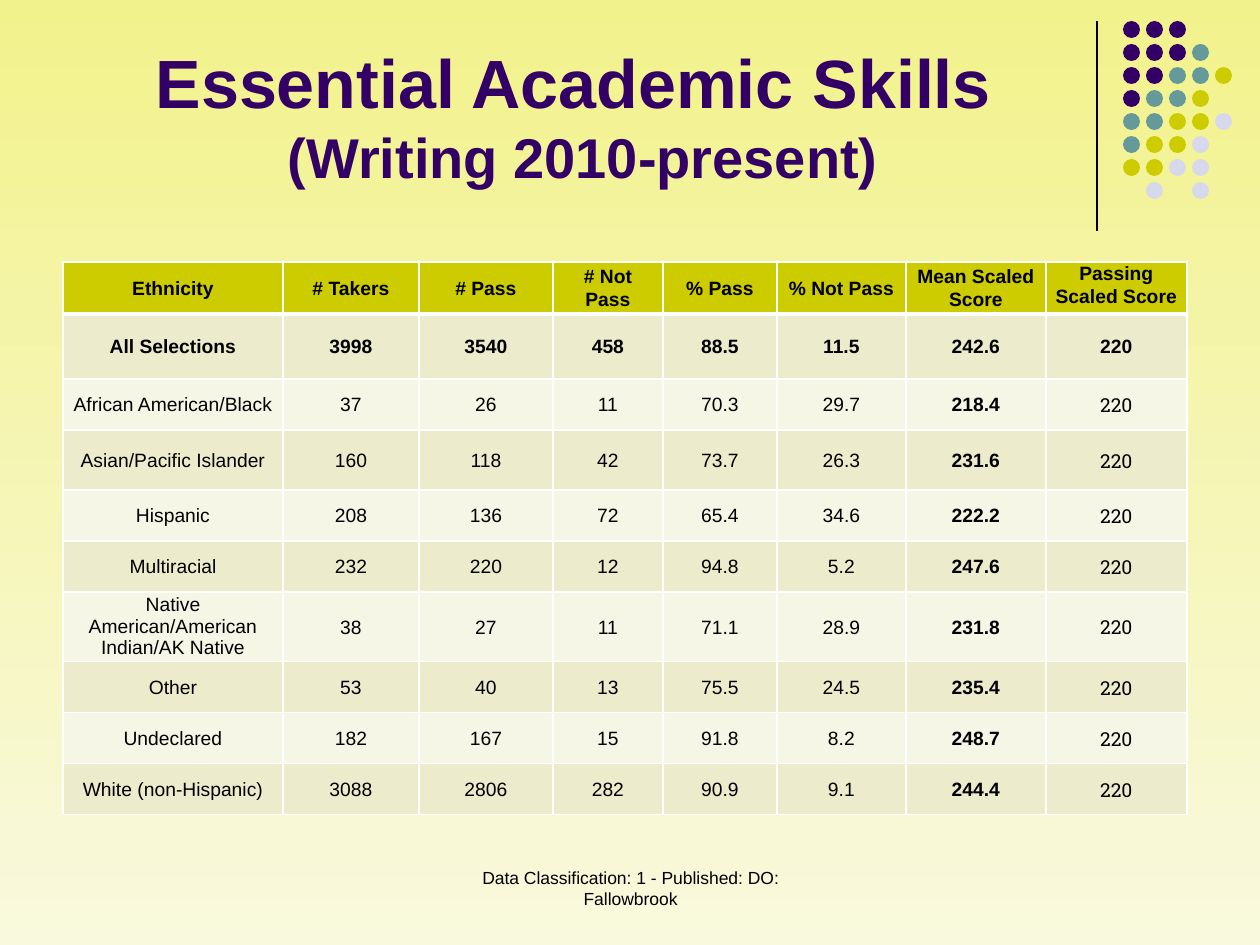
from dataclasses import dataclass

from lxml import etree
from pptx import Presentation
from pptx.dml.color import RGBColor
from pptx.enum.shapes import MSO_CONNECTOR, MSO_SHAPE
from pptx.enum.text import MSO_ANCHOR, PP_ALIGN
from pptx.oxml.ns import qn
from pptx.util import Pt

CENTER = PP_ALIGN.CENTER
TOP, MIDDLE, BOTTOM = MSO_ANCHOR.TOP, MSO_ANCHOR.MIDDLE, MSO_ANCHOR.BOTTOM
OVAL, STRAIGHT = MSO_SHAPE.OVAL, MSO_CONNECTOR.STRAIGHT
EMU_PER_PX = 914400 // 126


@dataclass(frozen=True)
class Theme:
    font: str = "Arial"
    score_font: str = "Roboto Slab"
    background_top: str = "F2F28C"
    background_bottom: str = "F9F9DE"
    purple: str = "330066"
    teal: str = "669999"
    olive: str = "CCCC00"
    lavender: str = "D8D8EC"
    ink: str = "000000"
    grid: str = "FFFFFF"
    band_dark: str = "ECECCC"
    band_light: str = "F6F6E7"
    title_size: float = 39
    subtitle_size: float = 32
    table_size: float = 11
    footer_size: float = 10


THEME = Theme()

# One letter per dot, a space where the grid is empty
DOT_ROWS = ["PPP", "PPPT", "PPTTO", "PTTO", "TTOOL", "TOOL", "OOLL", " L L"]
DOT_COLORS = {"P": THEME.purple, "T": THEME.teal,
              "O": THEME.olive, "L": THEME.lavender}

COLUMN_WIDTHS = [220, 136, 134, 110, 114, 129, 140, 141]
ROW_HEIGHTS = [52, 65, 51, 60, 51, 51, 69, 51, 51, 51]
MEAN_COLUMN, PASSING_COLUMN = 6, 7
PASSING_SCORE = "220"
LONG_LABEL = 30  # characters; such a label takes three lines
HEADER = ["Ethnicity", "# Takers", "# Pass", "# Not Pass", "% Pass",
          "% Not Pass", "Mean Scaled Score", "Passing Scaled Score"]
RESULTS = [
    ["All Selections", "3998", "3540", "458", "88.5", "11.5", "242.6"],
    ["African American/Black", "37", "26", "11", "70.3", "29.7", "218.4"],
    ["Asian/Pacific Islander", "160", "118", "42", "73.7", "26.3", "231.6"],
    ["Hispanic", "208", "136", "72", "65.4", "34.6", "222.2"],
    ["Multiracial", "232", "220", "12", "94.8", "5.2", "247.6"],
    ["Native American/American Indian/AK Native",
     "38", "27", "11", "71.1", "28.9", "231.8"],
    ["Other", "53", "40", "13", "75.5", "24.5", "235.4"],
    ["Undeclared", "182", "167", "15", "91.8", "8.2", "248.7"],
    ["White (non-Hispanic)", "3088", "2806", "282", "90.9", "9.1", "244.4"],
]


def px(length):
    return length * EMU_PER_PX


def rgb(color):
    return RGBColor.from_string(color)


def style_font(font, size, color, bold=False, name=THEME.font):
    font.name, font.size, font.bold = name, Pt(size), bold
    font.color.rgb = rgb(color)


def paint_background(slide):
    fill = slide.background.fill
    fill.gradient()
    fill.gradient_angle = 270
    first, last = fill.gradient_stops
    first.color.rgb = rgb(THEME.background_top)
    last.color.rgb = rgb(THEME.background_bottom)


def add_divider(slide, x, top, bottom):
    divider = slide.shapes.add_connector(
        STRAIGHT, px(x), px(top), px(x), px(bottom))
    divider.line.color.rgb = rgb(THEME.ink)
    divider.line.width = Pt(0.75)
    etree.SubElement(divider._element.spPr, qn("a:effectLst"))


def add_dots(slide, left, top, pitch, size):
    for row, letters in enumerate(DOT_ROWS):
        for column, letter in enumerate(letters):
            if letter == " ":
                continue
            dot = slide.shapes.add_shape(
                OVAL, px(left + column * pitch), px(top + row * pitch),
                px(size), px(size))
            dot.shadow.inherit = False
            dot.fill.solid()
            dot.fill.fore_color.rgb = rgb(DOT_COLORS[letter])
            dot.line.fill.background()


def add_text_area(slide, left, top, width, height, anchor):
    frame = slide.shapes.add_textbox(
        px(left), px(top), px(width), px(height)).text_frame
    frame.word_wrap = True
    frame.vertical_anchor = anchor
    frame.paragraphs[0].alignment = CENTER
    return frame.paragraphs[0]


def add_title(slide):
    title = add_text_area(slide, 63, 16, 1040, 180, BOTTOM)
    heading = title.add_run()
    heading.text = "Essential Academic Skills "
    style_font(heading.font, THEME.title_size, THEME.purple, bold=True)
    title.add_line_break()
    subtitle = title.add_run()
    subtitle.text = "(Writing 2010-present)"
    style_font(subtitle.font, THEME.subtitle_size, THEME.purple, bold=True)


def add_footer(slide):
    footer = add_text_area(slide, 431, 861, 399, 63, TOP)
    footer.text = "Data Classification: 1 - Published: DO: Fallowbrook"
    style_font(footer.font, THEME.footer_size, THEME.ink)


def set_borders(cell, top, bottom):
    properties = cell._tc.get_or_add_tcPr()
    widths = {"a:lnL": 1, "a:lnR": 1, "a:lnT": top, "a:lnB": bottom}
    for position, (tag, width) in enumerate(widths.items()):
        border = etree.Element(qn(tag), w=str(Pt(width)))
        fill = etree.SubElement(border, qn("a:solidFill"))
        etree.SubElement(fill, qn("a:srgbClr"), val=THEME.grid)
        properties.insert(position, border)


def fill_cell(cell, text, row, column):
    emphasized = row < 2  # header and totals
    is_score = column == PASSING_COLUMN and not emphasized
    if row == 0:
        color = THEME.olive
    else:
        color = THEME.band_dark if row % 2 else THEME.band_light
    cell.fill.solid()
    cell.fill.fore_color.rgb = rgb(color)
    set_borders(cell, top=3 if row == 1 else 1, bottom=3 if row == 0 else 1)
    cell.margin_left = cell.margin_right = px(9)
    cell.margin_top = cell.margin_bottom = 0
    top_aligned = row == 0 and column == PASSING_COLUMN
    cell.vertical_anchor = TOP if top_aligned else MIDDLE
    paragraph = cell.text_frame.paragraphs[0]
    paragraph.text = text
    paragraph.alignment = CENTER
    paragraph.line_spacing = 1.0 if len(text) > LONG_LABEL else 1.07
    style_font(paragraph.font, THEME.table_size, THEME.ink,
               bold=emphasized or column == MEAN_COLUMN,
               name=THEME.score_font if is_score else THEME.font)


def add_results_table(slide, left, top):
    rows = [HEADER] + [result + [PASSING_SCORE] for result in RESULTS]
    table = slide.shapes.add_table(
        len(rows), len(HEADER), px(left), px(top),
        px(sum(COLUMN_WIDTHS)), px(sum(ROW_HEIGHTS))).table
    for column, width in zip(table.columns, COLUMN_WIDTHS):
        column.width = px(width)
    for row, height in zip(table.rows, ROW_HEIGHTS):
        row.height = px(height)
    for row, texts in enumerate(rows):
        for column, text in enumerate(texts):
            fill_cell(table.cell(row, column), text, row, column)


def main():
    deck = Presentation()
    deck.slide_width, deck.slide_height = px(1260), px(945)
    slide = deck.slides.add_slide(deck.slide_layouts[6])
    paint_background(slide)

    # Corner decoration
    add_divider(slide, 1097, 21, 231)
    add_dots(slide, left=1123, top=21, pitch=23, size=17)

    # Content
    add_title(slide)
    add_footer(slide)
    add_results_table(slide, left=63, top=262)
    deck.save("out.pptx")


if __name__ == "__main__":
    main()
